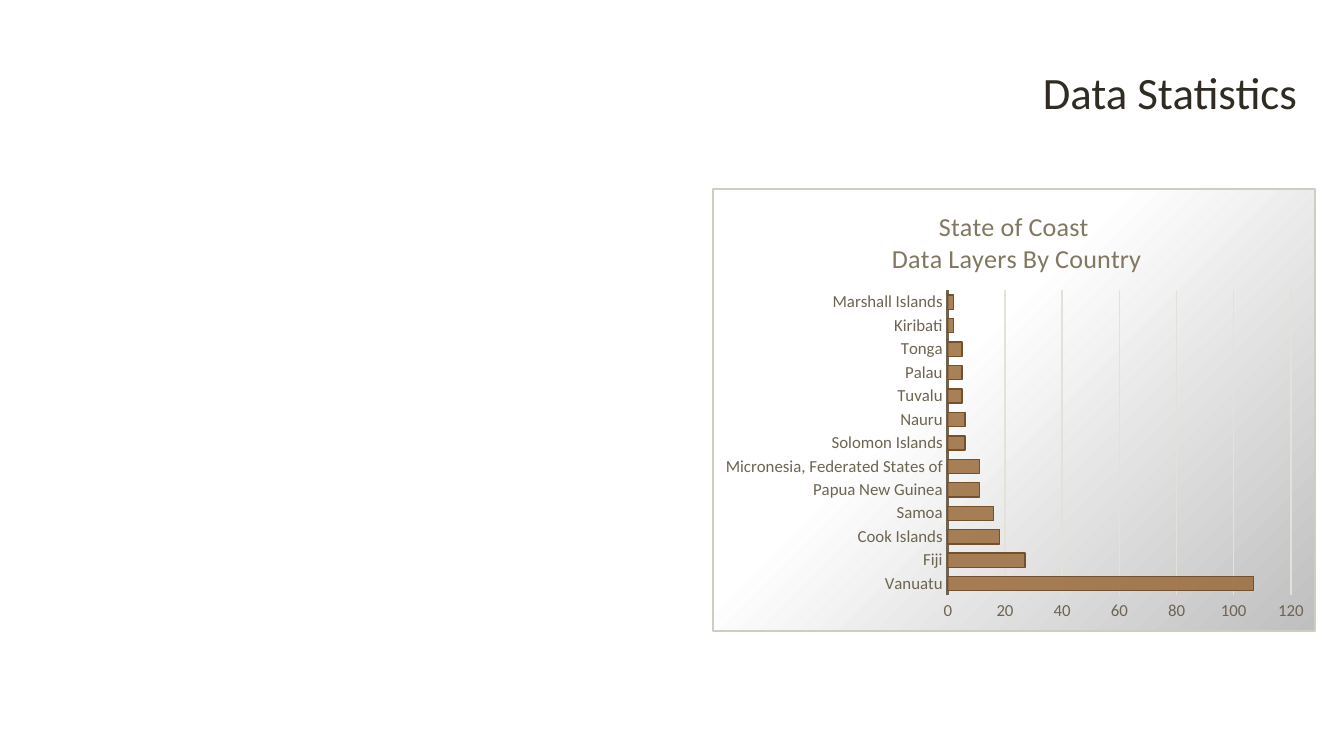
"""Build the Data Statistics slide with a bar chart of data layers by country."""
import pptx
import pptx.chart.data
import pptx.dml.color
import pptx.enum.chart
import pptx.enum.text
import pptx.oxml
import pptx.oxml.ns
import pptx.util

FONT = "Calibri"
INK, MUTED, HEADING = "302C24", "6D6452", "827760"
GRID, BORDER, BAR, BAR_EDGE = "E4E1DA", "D1CCC2", "9A6B3B", "74502C"
LAYERS = {
    "Vanuatu": 107, "Fiji": 27, "Cook Islands": 18, "Samoa": 16,
    "Papua New Guinea": 11, "Micronesia, Federated States of": 11,
    "Solomon Islands": 6, "Nauru": 6, "Tuvalu": 5, "Palau": 5,
    "Tonga": 5, "Kiribati": 2, "Marshall Islands": 2,
}


def style(font, size, color):
    font.name = FONT
    font.size = pptx.util.Pt(size)
    font.bold = False
    font.color.rgb = pptx.dml.color.RGBColor.from_string(color)


def outline(line, width, color):
    line.width = pptx.util.Pt(width)
    line.fill.solid()
    line.fill.fore_color.rgb = pptx.dml.color.RGBColor.from_string(color)


presentation = pptx.Presentation()
presentation.slide_width = width = pptx.util.Inches(10)
presentation.slide_height = width * 9 // 16
unit = width // 1000
slide = presentation.slides.add_slide(presentation.slide_layouts[5])

title = slide.shapes.title
title.left, title.top, title.width, title.height = 181 * unit, 47 * unit, 794 * unit, 48 * unit
title.text_frame.vertical_anchor = pptx.enum.text.MSO_ANCHOR.MIDDLE
paragraph = title.text_frame.paragraphs[0]
paragraph.alignment = pptx.enum.text.PP_ALIGN.RIGHT
paragraph.line_spacing = 0.9
run = paragraph.add_run()
run.text = "Data Statistics"
style(run.font, 24, INK)

data = pptx.chart.data.CategoryChartData()
data.categories = list(LAYERS)
data.add_series("Series 1", list(LAYERS.values()))
chart = slide.shapes.add_chart(
    pptx.enum.chart.XL_CHART_TYPE.BAR_CLUSTERED,
    530 * unit, 140 * unit, 449 * unit, 330 * unit, data).chart
style(chart.font, 10, INK)
chart.has_legend = False
chart.has_title = True
heading = chart.chart_title.text_frame
for index, text in enumerate(("State of Coast", " Data Layers By Country")):
    paragraph = heading.add_paragraph() if index else heading.paragraphs[0]
    run = paragraph.add_run()
    run.text = text
    style(run.font, 14, HEADING)

for axis in (chart.category_axis, chart.value_axis):
    axis.major_tick_mark = axis.minor_tick_mark = pptx.enum.chart.XL_TICK_MARK.NONE
    style(axis.tick_labels.font, 9, MUTED)
outline(chart.category_axis.format.line, 1.5, MUTED)
chart.value_axis.format.line.fill.background()
chart.value_axis.minimum_scale = 0
chart.value_axis.maximum_scale = 120
chart.value_axis.major_unit = 20
outline(chart.value_axis.major_gridlines.format.line, 0.75, GRID)

plot = chart.plots[0]
plot.gap_width = 65
plot.vary_by_categories = False
bars = plot.series[0].format
bars.fill.solid()
bars.fill.fore_color.rgb = pptx.dml.color.RGBColor.from_string(BAR)
outline(bars.line, 0.75, BAR_EDGE)

qualify = pptx.oxml.ns.qn
namespaces = pptx.oxml.ns.nsdecls("c", "a")
bar_color = plot.series[0]._element.find(".//" + qualify("a:srgbClr"))
bar_color.append(pptx.oxml.parse_xml(f'<a:alpha {namespaces} val="85000"/>'))

stops = "".join(
    f'<a:gs pos="{position * 1000}"><a:srgbClr val="{color}"/></a:gs>'
    for position, color in ((0, "FFFFFF"), (39, "FFFFFF"), (100, "BFBFBF")))
chart_element = chart._chartSpace.find(qualify("c:chart"))
chart_element.addnext(pptx.oxml.parse_xml(
    f'<c:spPr {namespaces}><a:gradFill><a:gsLst>{stops}</a:gsLst>'
    '<a:lin ang="2700000" scaled="0"/></a:gradFill>'
    f'<a:ln w="9525"><a:solidFill><a:srgbClr val="{BORDER}"/></a:solidFill></a:ln></c:spPr>'))

plot_area = chart_element.find(qualify("c:plotArea"))
for layout in plot_area.findall(qualify("c:layout")):
    plot_area.remove(layout)
edges = "".join(f'<c:{side}Mode val="edge"/>' for side in "xy")
shares = "".join(
    f'<c:{side} val="{share}"/>'
    for side, share in (("x", 0.39), ("y", 0.23), ("w", 0.57), ("h", 0.69)))
plot_area.insert(0, pptx.oxml.parse_xml(
    f'<c:layout {namespaces}><c:manualLayout><c:layoutTarget val="inner"/>'
    f'{edges}{shares}</c:manualLayout></c:layout>'))

presentation.save("out.pptx")
